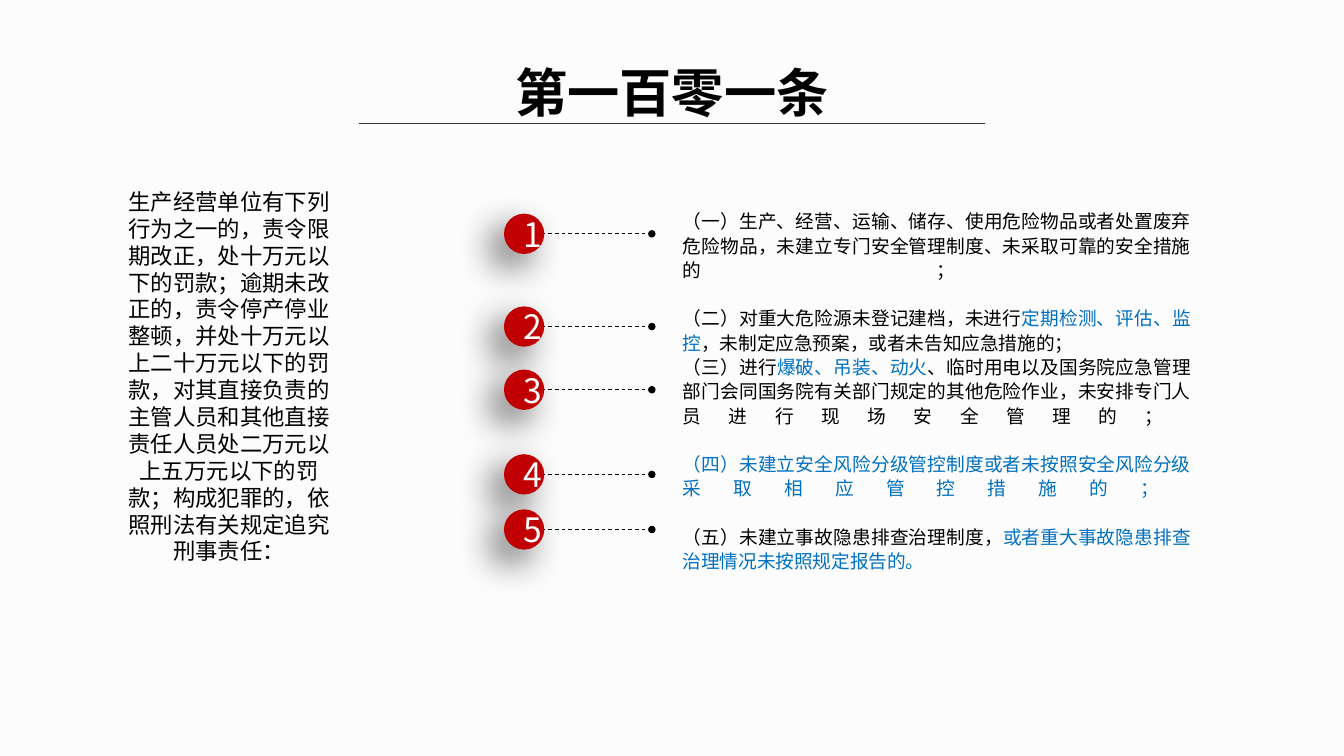
from pptx import Presentation
from pptx.dml.color import RGBColor
from pptx.enum.dml import MSO_LINE
from pptx.enum.shapes import MSO_CONNECTOR, MSO_SHAPE
from pptx.enum.text import MSO_ANCHOR, MSO_AUTO_SIZE, PP_ALIGN
from pptx.oxml import parse_xml
from pptx.oxml.ns import nsdecls
from pptx.util import Inches, Pt

BLACK, BLUE, RED, WHITE = "000000", "0070C0", "C00002", "FFFFFF"
BREAK = "\n"


def rgb(color):
    return RGBColor.from_string(color)


def write(paragraph, text, size, color=BLACK, bold=False, font="Noto Sans CJK SC"):
    for index, line in enumerate(text.split(BREAK)):
        if index:
            paragraph.add_line_break()
        if line:
            run = paragraph.add_run()
            run.text = line
            run.font.size = Pt(size)
            run.font.bold = bold
            run.font.color.rgb = rgb(color)
            run.font.name = font
            run.font._element.append(
                parse_xml(f'<a:ea {nsdecls("a")} typeface="{font}"/>'))


class ArticleSlide:
    columns = 100

    def __init__(self, deck, background):
        self.cell = deck.slide_width / self.columns
        self.slide = deck.slides.add_slide(deck.slide_layouts[6])
        self.slide.background.fill.solid()
        self.slide.background.fill.fore_color.rgb = rgb(background)

    def place(self, *lengths):
        return [round(length * self.cell) for length in lengths]

    def text(self, area, paragraphs, size, align=PP_ALIGN.CENTER,
             bold=False, inset=0, spacing=None, hanging=True):
        frame = self.slide.shapes.add_textbox(*self.place(*area)).text_frame
        frame.word_wrap = True
        frame.auto_size = MSO_AUTO_SIZE.SHAPE_TO_FIT_TEXT
        frame.margin_left = frame.margin_right = Inches(inset)
        frame.margin_top = frame.margin_bottom = Inches(inset / 2)
        for index, passages in enumerate(paragraphs):
            paragraph = frame.add_paragraph() if index else frame.paragraphs[0]
            paragraph.alignment = align
            if spacing:
                paragraph.line_spacing = Pt(spacing)
            if not hanging:
                paragraph._p.get_or_add_pPr().set("hangingPunct", "0")
            for passage, color in passages:
                write(paragraph, passage, size, color=color, bold=bold)

    def rule(self, left, right, row, color, width, dotted=False):
        line = self.slide.shapes.add_connector(
            MSO_CONNECTOR.STRAIGHT, *self.place(left, row, right, row))
        line.line.color.rgb = rgb(color)
        line.line.width = Pt(width)
        if dotted:
            line.line.dash_style = MSO_LINE.DASH
            line.line._get_or_add_ln().append(parse_xml(
                f'<a:tailEnd {nsdecls("a")} type="oval" w="sm" len="sm"/>'))
        line._element.spPr.append(parse_xml(f'<a:effectLst {nsdecls("a")}/>'))

    def badge(self, left, center, size, label):
        circle = self.slide.shapes.add_shape(
            MSO_SHAPE.OVAL, *self.place(left, center - size / 2, size, size))
        circle.fill.solid()
        circle.fill.fore_color.rgb = rgb(RED)
        circle.line.fill.background()
        circle._element.spPr.append(parse_xml(
            f'<a:effectLst {nsdecls("a")}>'
            f'<a:outerShdw blurRad="{Pt(20)}" dist="{Pt(10)}" dir="{135 * 60000}" '
            f'rotWithShape="0"><a:srgbClr val="{BLACK}"><a:alpha val="60000"/>'
            '</a:srgbClr></a:outerShdw></a:effectLst>'))
        circle.text_frame.vertical_anchor = MSO_ANCHOR.MIDDLE
        paragraph = circle.text_frame.paragraphs[0]
        paragraph.alignment = PP_ALIGN.CENTER
        write(paragraph, label, 18, color=WHITE)


PENALTY = (
    "生产经营单位有下列行为之一的，责令限期改正，处十万元以下的罚款；"
    "逾期未改正的，责令停产停业整顿，并处十万元以上二十万元以下的罚款，"
    "对其直接负责的主管人员和其他直接责任人员处二万元以上五万元以下的罚款；"
    "构成犯罪的，依照刑法有关规定追究刑事责任：")

OFFENCES = [
    [("（一）生产、经营、运输、储存、使用危险物品或者处置废弃危险物品，"
      "未建立专门安全管理制度、未采取可靠的安全措施的；" + BREAK * 2
      + "（二）对重大危险源未登记建档，未进行", BLACK),
     ("定期检测、评估、监控", BLUE),
     ("，未制定应急预案，或者未告知应急措施的；", BLACK)],
    [("（三）进行", BLACK),
     ("爆破、吊装、动火", BLUE),
     ("、临时用电以及国务院应急管理部门会同国务院有关部门规定的其他危险作业，"
      "未安排专门人员进行现场安全管理的；" + BREAK * 2, BLACK),
     ("（四）未建立安全风险分级管控制度或者未按照安全风险分级"
      "采取相应管控措施的；" + BREAK * 2, BLUE),
     ("（五）未建立事故隐患排查治理制度，", BLACK),
     ("或者重大事故隐患排查治理情况未按照规定报告的。", BLUE)],
]

OFFENCE_ROWS = [17.4, 24.3, 29, 35.3, 39.4]


def main():
    deck = Presentation()
    deck.slide_width = Inches(10)
    deck.slide_height = deck.slide_width * 9 // 16
    article = ArticleSlide(deck, "FCFCFC")
    article.text((31.5, 4, 37, 5.7), [[("第一百零一条", BLACK)]], 28,
                 bold=True, inset=0.1)
    article.rule(26.7, 73.3, 9.2, "333333", 0.75)
    article.text((50.8, 15.5, 37.8, 29), OFFENCES, 10,
                 align=PP_ALIGN.JUSTIFY, spacing=13)
    for row in OFFENCE_ROWS:
        article.rule(39.8, 48.5, row, BLACK, 0.5, dotted=True)
    for number, row in enumerate(OFFENCE_ROWS, 1):
        article.badge(37.5, row, 3, str(number))
    article.text((9.4, 14, 15.3, 28.3), [[(PENALTY, BLACK)]], 12, hanging=False)
    deck.save("out.pptx")


if __name__ == "__main__":
    main()
